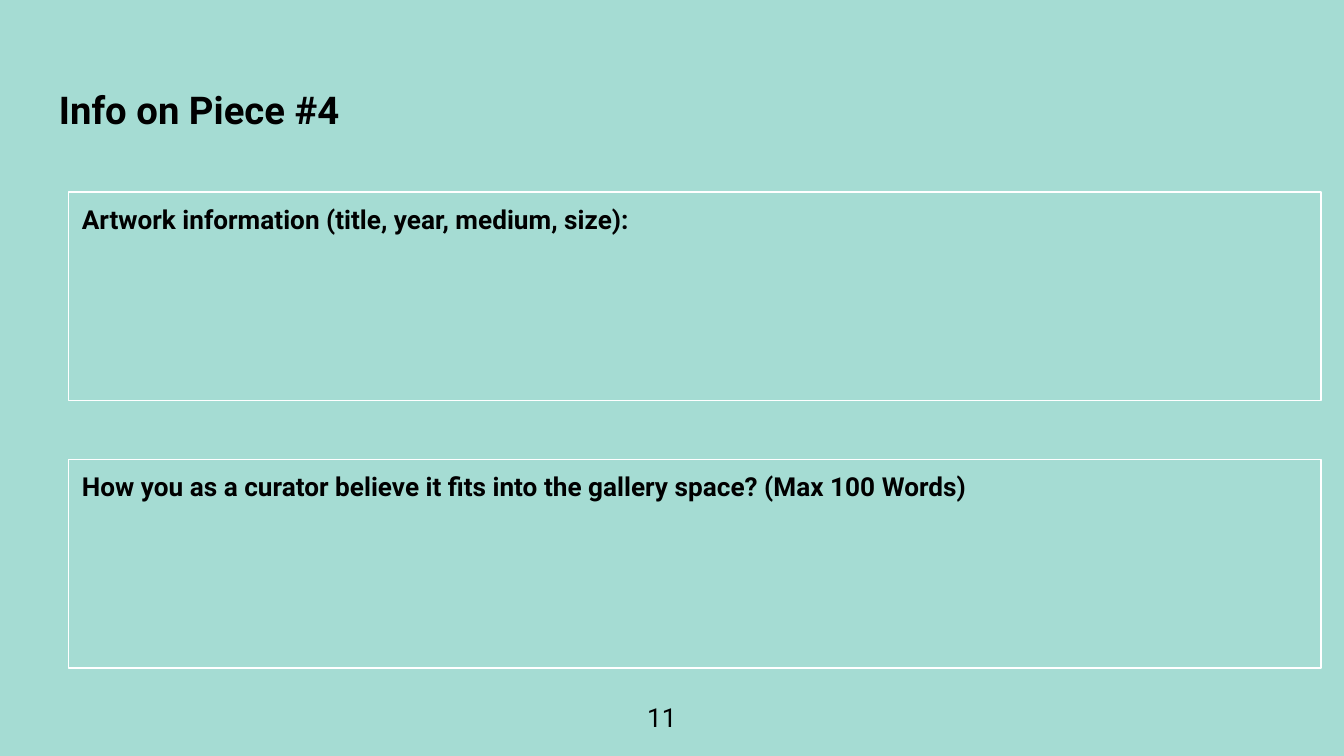
from pptx import Presentation
from pptx.dml.color import RGBColor as Color
from pptx.enum.text import MSO_ANCHOR as Anchor, PP_ALIGN as Align
from pptx.util import Inches, Pt

COLORS = {"background": "A5DCD3", "text": "000000", "border": "FFFFFF"}


class SlideBuilder:
    font_name = "Roboto"
    inset = Inches(0.1)

    def __init__(self, presentation):
        self.slide = presentation.slides.add_slide(presentation.slide_layouts[6])
        fill = self.slide.background.fill
        fill.solid()
        fill.fore_color.rgb = Color.from_string(COLORS["background"])

    def text(self, content, left, top, width, height, size=14, bold=True, **paragraph_format):
        shape = self.slide.shapes.add_textbox(*map(Inches, (left, top, width, height)))
        frame = shape.text_frame
        frame_format = {"word_wrap": True, "vertical_anchor": Anchor.TOP}
        for side in ("left", "top", "right", "bottom"):
            frame_format[f"margin_{side}"] = self.inset
        for name, value in frame_format.items():
            setattr(frame, name, value)
        paragraph = frame.paragraphs[0]
        for name, value in paragraph_format.items():
            setattr(paragraph, name, value)
        run = paragraph.add_run()
        run.text = content
        font_format = {"name": self.font_name, "size": Pt(size), "bold": bold}
        for name, value in font_format.items():
            setattr(run.font, name, value)
        run.font.color.rgb = Color.from_string(COLORS["text"])
        return shape

    def answer_box(self, prompt, top):
        shape = self.text(prompt, 0.51, top, 9.32, 1.55, line_spacing=0.95)
        shape.line.color.rgb = Color.from_string(COLORS["border"])
        shape.line.width = Pt(0.75)


def main():
    presentation = Presentation()
    presentation.slide_width = Inches(10)
    presentation.slide_height = presentation.slide_width * 9 // 16
    builder = SlideBuilder(presentation)

    builder.text("Info on Piece #4", 0.34, 0.49, 9.32, 0.63, size=20.5,
                 line_spacing=1.15, space_after=Pt(12))
    builder.text("11", 2.31, 5.12, 5.23, 0.44, bold=False, alignment=Align.CENTER)
    prompts = [
        "Artwork information (title, year, medium, size):",
        "How you as a curator believe it fits into the gallery space? (Max 100 Words)",
    ]
    for index, prompt in enumerate(prompts):
        builder.answer_box(prompt, 1.43 + index * 1.99)

    presentation.save("out.pptx")


if __name__ == "__main__":
    main()
